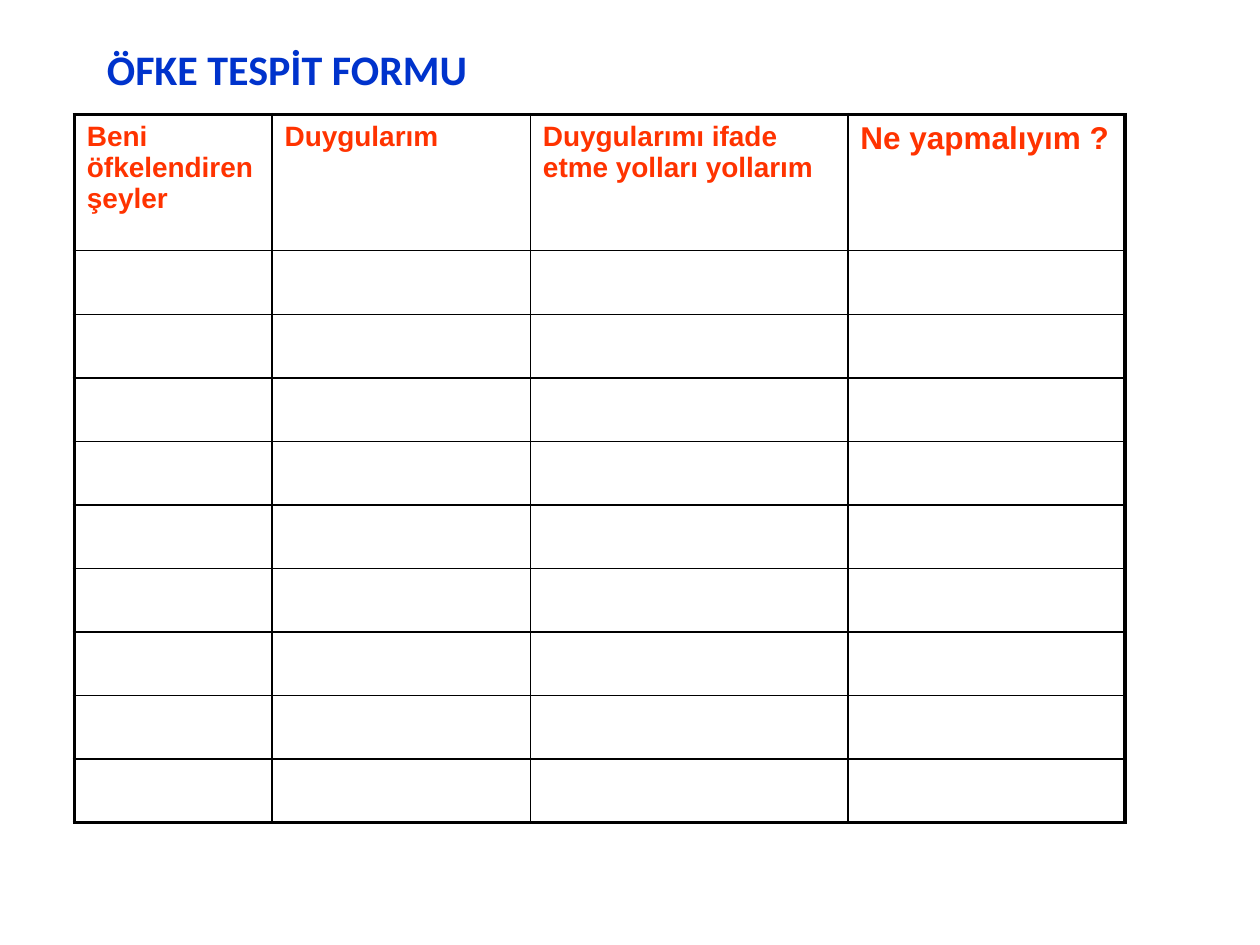
from lxml.etree import SubElement
from pptx import Presentation
from pptx.dml.color import RGBColor
from pptx.oxml.ns import qn
from pptx.util import Inches, Pt

HEADERS = [
    ("Beni öfkelendiren şeyler", 16),
    ("Duygularım", 16),
    ("Duygularımı ifade etme yolları yollarım", 16),
    ("Ne yapmalıyım ?", 18),
]
COLUMN_WIDTHS = [1.57, 2.05, 2.52, 2.2]
ROW_COUNT = 10
TABLE_HEIGHT = 5.62
HEADER_HEIGHT = 1.08


def color(value):
    """Turn a hex string into a colour."""
    return RGBColor.from_string(value)


class FormSlide:
    """Holds the style of the form and the slide it is drawn on."""

    title_color = "0033CC"
    header_color = "FF3300"
    border_color = "000000"
    inner_width = 1
    outer_width = 2.25

    def __init__(self, slide):
        """Keep the slide that receives the elements."""
        self.slide = slide

    def format_text(self, text_frame, font_name, size, text_color):
        """Set the font of every run in bold."""
        for paragraph in text_frame.paragraphs:
            for run in paragraph.runs:
                run.font.name = font_name
                run.font.size = Pt(size)
                run.font.bold = True
                run.font.color.rgb = color(text_color)

    def add_title(self, text, left, top, width, height):
        """Add the form title."""
        shape = self.slide.shapes.add_textbox(
            Inches(left), Inches(top), Inches(width), Inches(height))
        shape.text_frame.word_wrap = True
        shape.text_frame.text = text
        self.format_text(shape.text_frame, "Calibri", 24, self.title_color)

    def add_borders(self, cell, outer_sides):
        """Draw the four cell borders, thicker on the outer sides."""
        properties = cell._tc.get_or_add_tcPr()
        for index, (side, outer) in enumerate(zip("LRTB", outer_sides)):
            width = Pt(self.outer_width if outer else self.inner_width)
            line = properties.makeelement(qn(f"a:ln{side}"), {"w": str(width)})
            fill = SubElement(line, qn("a:solidFill"))
            SubElement(fill, qn("a:srgbClr"), val=self.border_color)
            properties.insert(index, line)

    def add_form(self, headers, widths, row_count, left, top):
        """Add the table with its header row and empty rows to fill in."""
        frame = self.slide.shapes.add_table(
            row_count, len(widths), Inches(left), Inches(top),
            Inches(sum(widths)), Inches(TABLE_HEIGHT))
        table = frame.table
        table.first_row = False
        table.horz_banding = False
        for column, width in zip(table.columns, widths):
            column.width = Inches(width)
        row_height = (TABLE_HEIGHT - HEADER_HEIGHT) / (row_count - 1)
        last_row, last_column = row_count - 1, len(widths) - 1
        for row_index, row in enumerate(table.rows):
            row.height = Inches(row_height if row_index else HEADER_HEIGHT)
            for column_index, cell in enumerate(row.cells):
                cell.fill.background()
                self.add_borders(cell, (
                    column_index == 0, column_index == last_column,
                    row_index == 0, row_index == last_row))
        for cell, (text, size) in zip(table.rows[0].cells, headers):
            cell.text_frame.text = text
            self.format_text(cell.text_frame, "Arial", size, self.header_color)


def main():
    """Build the anger form and save it."""
    presentation = Presentation()
    presentation.slide_width = Inches(10)
    presentation.slide_height = Inches(7.5)
    slide = presentation.slides.add_slide(presentation.slide_layouts[6])
    form = FormSlide(slide)
    form.add_form(HEADERS, COLUMN_WIDTHS, ROW_COUNT, 0.59, 0.91)
    form.add_title("ÖFKE TESPİT FORMU", 0.75, 0.3, 4.8, 0.5)
    presentation.save("out.pptx")


if __name__ == "__main__":
    main()
